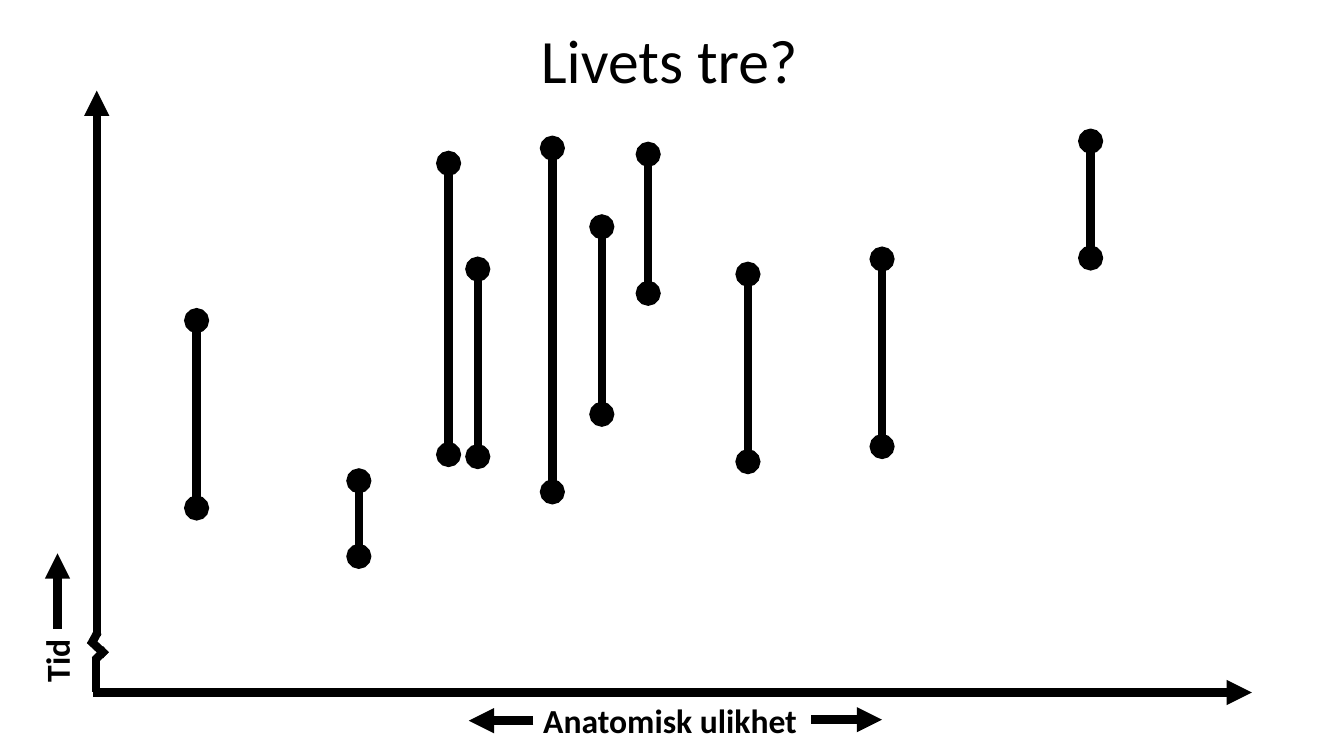
import pptx
import pptx.util
import pptx.dml.color
import pptx.enum.shapes
import pptx.enum.text
import pptx.oxml.ns
import lxml.etree

BLACK = pptx.dml.color.RGBColor(0, 0, 0)
ALIGN = pptx.enum.text.PP_ALIGN
ANCHOR = pptx.enum.text.MSO_ANCHOR


class Page:
    """One slide; places are in percent of its width and height."""
    font = "Calibri"
    ink = BLACK
    stroke = 6

    def __init__(self, deck):
        self.wide, self.high = deck.slide_width, deck.slide_height
        self.shapes = deck.slides.add_slide(deck.slide_layouts[6]).shapes

    def x(self, share):
        return round(self.wide * share / 100)

    def y(self, share):
        return round(self.high * share / 100)

    def line(self, start, end, head=None, tail=None):
        link = self.shapes.add_connector(
            pptx.enum.shapes.MSO_CONNECTOR.STRAIGHT,
            self.x(start[0]), self.y(start[1]), self.x(end[0]), self.y(end[1]))
        link.line.width = pptx.util.Pt(self.stroke)
        link.line.color.rgb = self.ink
        qn = pptx.oxml.ns.qn
        for tag, kind in (("a:headEnd", head), ("a:tailEnd", tail)):
            if kind:
                lxml.etree.SubElement(link.line._ln, qn(tag), type=kind)
        lxml.etree.SubElement(link._element.spPr, qn("a:effectLst"))

    def arrow(self, start, end):
        self.line(start, end, tail="triangle")

    def span(self, col, top, base):
        """Upright bar with a dot at each end."""
        self.line((col, top), (col, base), "oval", "oval")

    def text(self, words, left, top, wide, high, size=24, bold=True,
             align=ALIGN.LEFT, anchor=ANCHOR.TOP, turn=0):
        box = self.shapes.add_textbox(
            self.x(left), self.y(top), self.x(wide), self.y(high))
        box.rotation = turn
        frame = box.text_frame
        frame.word_wrap = True
        frame.vertical_anchor = anchor
        frame.text = words
        para = frame.paragraphs[0]
        para.alignment = align
        font = para.runs[0].font
        font.name, font.size, font.bold = self.font, pptx.util.Pt(size), bold
        font.color.rgb = self.ink


# column, top, base
SPANS = [
    (14.63, 42.4, 67.2),
    (35.55, 35.6, 60.4),
    (26.7, 63.6, 73.6),
    (81.15, 18.67, 34.13),
    (41.1, 19.6, 65.07),
    (48.23, 20.4, 38.8),
    (55.65, 36.27, 61.07),
    (33.38, 21.6, 60.13),
    (65.63, 34.27, 59.07),
    (44.78, 30, 54.8),
]

ARROWS = [
    ((6.9, 91.6), (93.15, 91.6)),
    ((7.2, 84.13), (7.2, 12)),
    ((4.28, 83.2), (4.28, 73.2)),
    ((60.38, 95.2), (65.63, 95.2)),
    ((39.68, 95.33), (34.88, 95.33)),
]

# zigzag where the time axis is broken
BREAK = [
    ((7.13, 86.93), (7.13, 91.6)),
    ((7.88, 85.87), (7.05, 87.33)),
    ((6.75, 85.33), (7.28, 83.6)),
    ((7.88, 86.67), (6.68, 84.67)),
]


def main():
    deck = pptx.Presentation()
    deck.slide_width = pptx.util.Inches(13.33)
    deck.slide_height = pptx.util.Inches(7.5)
    page = Page(deck)
    page.text("Livets tre?", 39.38, -1.87, 20.85, 19.33, size=44, bold=False,
              align=ALIGN.CENTER, anchor=ANCHOR.MIDDLE)
    page.text("Anatomisk ulikhet", 39.68, 91.87, 20.7, 6.67)
    page.text("Tid", -6.15, 69.87, 20.7, 6.67, turn=270)
    for ends in ARROWS:
        page.arrow(*ends)
    for ends in BREAK:
        page.line(*ends)
    for span in SPANS:
        page.span(*span)
    deck.save("out.pptx")


if __name__ == "__main__":
    main()
